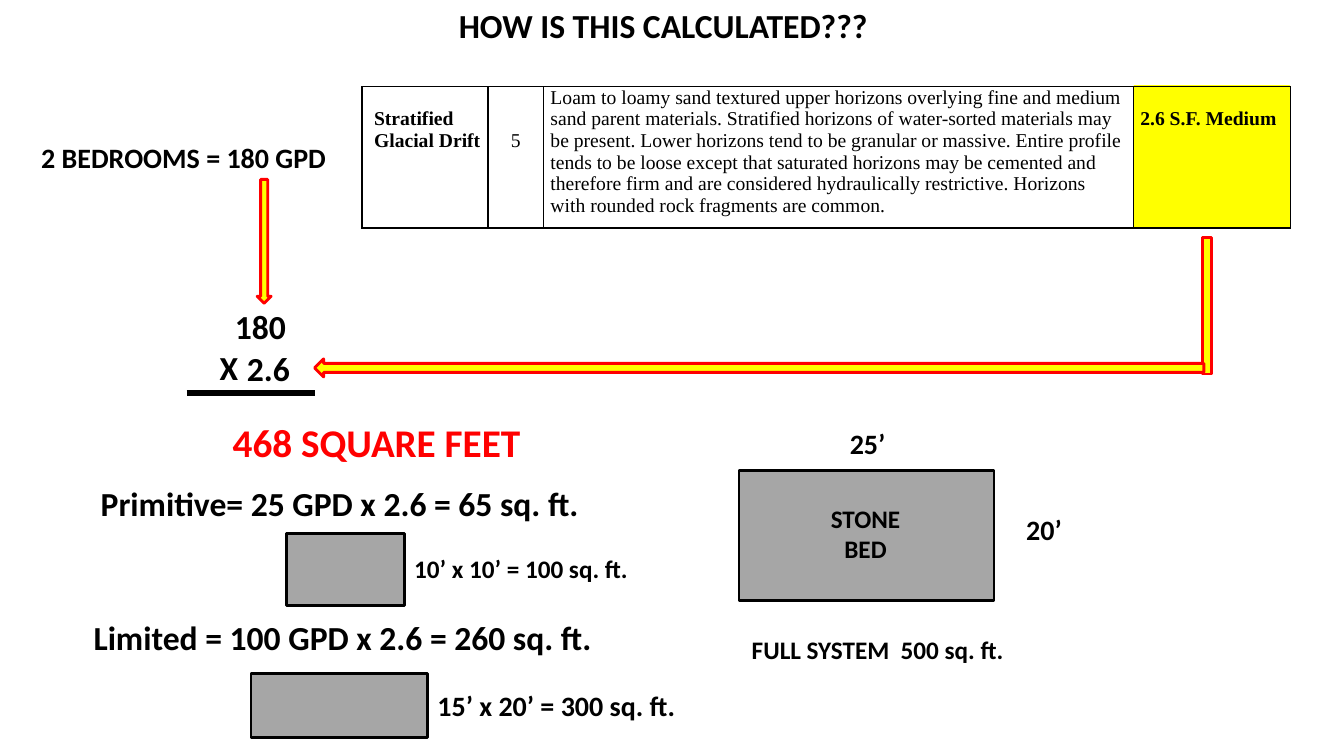
from lxml.etree import SubElement
from pptx import Presentation
from pptx.dml.color import RGBColor
from pptx.enum.shapes import MSO_CONNECTOR, MSO_SHAPE
from pptx.enum.text import MSO_ANCHOR, PP_ALIGN
from pptx.oxml.ns import qn
from pptx.util import Inches, Pt

COLORS = {"black": "000000", "red": "FF0000", "yellow": "FFFF00", "gray": "A6A6A6"}
UNIT = 0.1
LEFT, CENTER = PP_ALIGN.LEFT, PP_ALIGN.CENTER


def grid(*units):
    return [Inches(u * UNIT) for u in units]


def rgb(name):
    return RGBColor.from_string(COLORS[name])


def assign(target, values):
    for name, value in values.items():
        setattr(target, name, value)


class SlideBuilder:
    def __init__(self, prs):
        self.slide = prs.slides.add_slide(prs.slide_layouts[5])
        self.shapes = self.slide.shapes
        self.font = {"name": "Calibri", "bold": True}
        self.frame = {"word_wrap": True, "vertical_anchor": MSO_ANCHOR.TOP}

    def fill_text(self, tf, text, size, color="black", align=LEFT, **font):
        for i, line in enumerate(text.split("\n")):
            p = tf.add_paragraph() if i else tf.paragraphs[0]
            p.alignment = align
            r = p.add_run()
            r.text = line
            assign(r.font, {**self.font, "size": Pt(size), **font})
            r.font.color.rgb = rgb(color)

    def title(self, box, text, size):
        sp = self.shapes.title
        assign(sp, dict(zip(("left", "top", "width", "height"), grid(*box))))
        assign(sp.text_frame, self.frame)
        self.fill_text(sp.text_frame, text, size)

    def text(self, box, text, size, color="black", align=LEFT):
        sp = self.shapes.add_textbox(*grid(*box))
        assign(sp.text_frame, self.frame)
        self.fill_text(sp.text_frame, text, size, color, align)
        return sp

    def shape(self, box, fill, line, kind=MSO_SHAPE.RECTANGLE):
        sp = self.shapes.add_shape(kind, *grid(*box))
        sp.shadow.inherit = False
        sp.fill.solid()
        sp.fill.fore_color.rgb = rgb(fill)
        sp.line.color.rgb = rgb(line)
        sp.line.width = Pt(2)
        return sp

    def rule(self, x1, x2, y, width):
        cx = self.shapes.add_connector(MSO_CONNECTOR.STRAIGHT, *grid(x1, y, x2, y))
        cx.line.color.rgb = rgb("black")
        cx.line.width = Pt(width)
        SubElement(cx._element.spPr, qn("a:effectLst"))

    def borders(self, cell):
        tc_pr = cell._tc.get_or_add_tcPr()
        for i, side in enumerate(("a:lnL", "a:lnR", "a:lnT", "a:lnB")):
            ln = tc_pr.makeelement(qn(side), {"w": str(Pt(1))})
            tc_pr.insert(i, ln)
            fill = SubElement(ln, qn("a:solidFill"))
            SubElement(fill, qn("a:srgbClr"), val=COLORS["black"])

    def table(self, box, columns):
        table = self.shapes.add_table(1, len(columns), *grid(*box)).table
        assign(table, {"first_row": False, "horz_banding": False})
        for i, (width, text, left, top, align, bold) in enumerate(columns):
            table.columns[i].width = Inches(width * UNIT)
            cell = table.cell(0, i)
            cell.fill.background()
            margins = grid(left, top, 0.7, 0)
            names = ("margin_left", "margin_top", "margin_right", "margin_bottom")
            assign(cell, dict(zip(names, margins)))
            self.fill_text(cell.text_frame, text, 14, align=align,
                           name="Times New Roman", bold=bold)
            self.borders(cell)


def main():
    prs = Presentation()
    assign(prs, {"slide_width": Inches(13.33), "slide_height": Inches(7.5)})
    s = SlideBuilder(prs)

    s.title((44.5, 0, 43.2, 5), "HOW IS THIS CALCULATED???", 24)
    s.shape((112.5, 8.6, 15.4, 14), "yellow", "yellow")
    s.text((3.1, 13.4, 32.8, 4.4), "2 BEDROOMS = 180 GPD", 20)
    soil = (
        "Loam to loamy sand textured upper horizons overlying fine and medium sand "
        "parent materials. Stratified horizons of water-sorted materials may be present. "
        "Lower horizons tend to be granular or massive. Entire profile tends to be loose "
        "except that saturated horizons may be cemented and therefore firm and are "
        "considered hydraulically restrictive. Horizons with rounded rock fragments are common."
    )
    s.table((35.9, 8.6, 92, 14), [
        (12.5, "Stratified Glacial Drift", 1.2, 2.15, LEFT, True),
        (5.5, "5", 0.7, 4.3, CENTER, False),
        (58.5, soil, 0.7, 0, LEFT, False),
        (15.6, "2.6 S.F. Medium", 0.7, 2.15, LEFT, True),
    ])

    s.shape((25.5, 17.8, 1.4, 12.3), "yellow", "red", MSO_SHAPE.DOWN_ARROW)
    factors = s.text((20.8, 29.9, 10.9, 9.1), "180\nX", 24)
    p = factors.text_frame.paragraphs[0]
    p._p.get_or_add_pPr().set("marL", str(Inches(0.15)))
    s.shape((119.3, 23.6, 0.9, 13.5), "yellow", "red")
    s.shape((31.2, 35.6, 88.2, 1.8), "yellow", "red", MSO_SHAPE.LEFT_ARROW)
    s.text((23.5, 34, 6.9, 5), "2.6", 24)
    s.rule(18.5, 31.2, 39, 4.5)
    s.text((22.1, 41, 32.2, 5.7), "468 SQUARE FEET", 28, "red")

    for bed in ((73.3, 46.7, 25.3, 12.9), (28.4, 52.9, 11.7, 7.2), (24.9, 66.8, 17.5, 6.4)):
        s.shape(bed, "gray", "black")

    for box, text, size, align in (
        ((83.3, 41.8, 8.8, 4.4), "25’", 20, LEFT),
        ((100.8, 50.4, 7.8, 4.4), "20’", 20, LEFT),
        ((76.7, 49.4, 18.3, 7.1), "STONE\nBED", 18, CENTER),
        ((73.3, 62.4, 27.5, 4), "FULL SYSTEM  500 sq. ft.", 18, CENTER),
        ((9, 47.4, 53.8, 5), "Primitive= 25 GPD x 2.6 = 65 sq. ft.", 24, LEFT),
        ((40.1, 54.4, 24.3, 4), "10’ x 10’ = 100 sq. ft.", 18, LEFT),
        ((8.3, 60.7, 51.8, 5), "Limited = 100 GPD x 2.6 = 260 sq. ft.", 24, LEFT),
        ((42.4, 67.8, 26.4, 4.4), "15’ x 20’ = 300 sq. ft.", 20, LEFT),
    ):
        s.text(box, text, size, align=align)

    prs.save("out.pptx")


if __name__ == "__main__":
    main()
